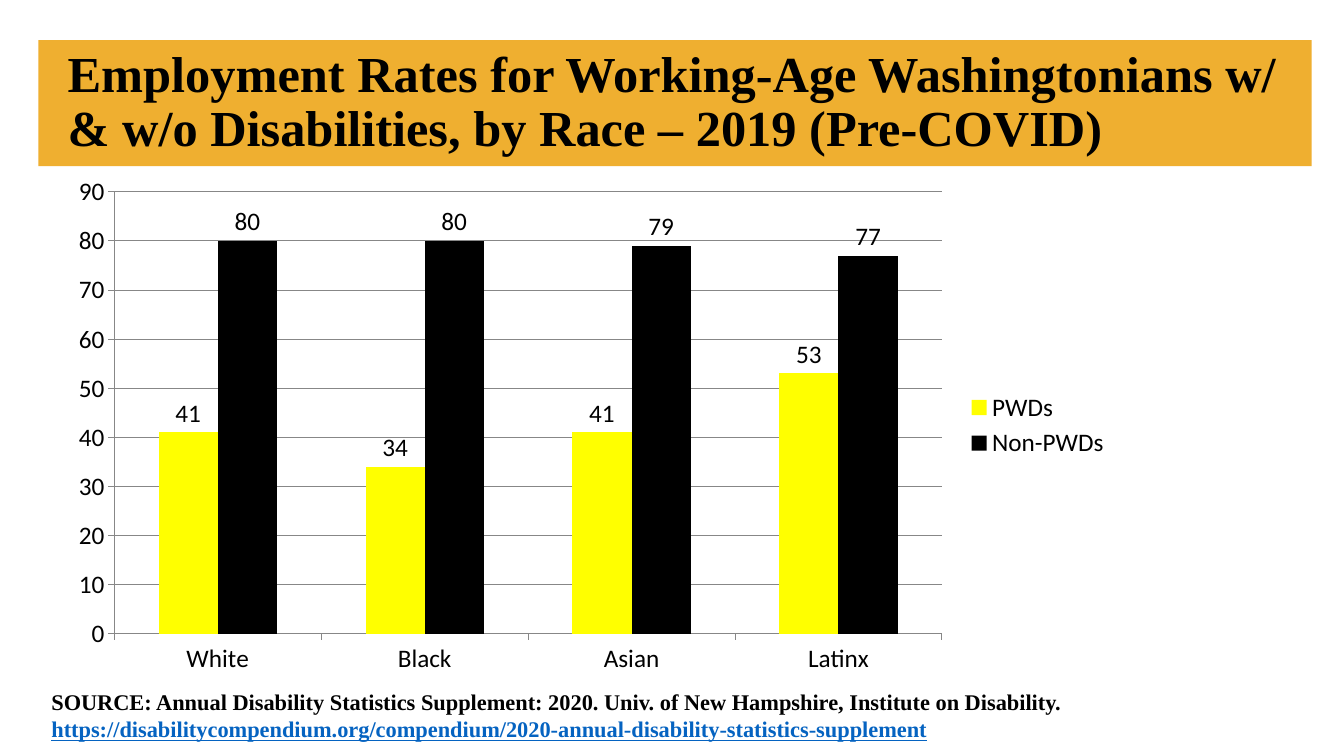
"""Build a slide comparing employment rates by race and disability."""
from dataclasses import dataclass

from pptx import Presentation
from pptx.chart.chart import Chart
from pptx.chart.data import CategoryChartData
from pptx.dml.color import RGBColor
from pptx.enum.chart import XL_CHART_TYPE as ChartType
from pptx.enum.chart import XL_LABEL_POSITION as LabelPosition
from pptx.enum.chart import XL_LEGEND_POSITION as LegendPosition
from pptx.enum.chart import XL_TICK_MARK as TickMark
from pptx.enum.shapes import MSO_SHAPE as ShapeKind
from pptx.enum.text import MSO_ANCHOR as Anchor
from pptx.enum.text import MSO_AUTO_SIZE as AutoSize
from pptx.enum.text import PP_ALIGN as Align
from pptx.slide import Slide
from pptx.text.text import Font, TextFrame
from pptx.util import Inches, Pt

WIDTH, HEIGHT = Inches(13.33), Inches(7.5)
BLACK, GOLD, YELLOW, LINK, GREY = "000000", "EFAF30", "FFFF00", "0563C1", "878787"
SERIF, SANS = "Times New Roman", "Calibri"


@dataclass(frozen=True)
class Frame:
    """A rectangle in percent of the slide's width and height."""
    left: float
    top: float
    width: float
    height: float

    def lengths(self) -> tuple[int, int, int, int]:
        """Return left, top, width and height as slide lengths."""
        return (int(WIDTH * self.left / 100), int(HEIGHT * self.top / 100),
                int(WIDTH * self.width / 100), int(HEIGHT * self.height / 100))


@dataclass(frozen=True)
class Span:
    """One run of bold serif text."""
    text: str
    size: int
    color: str = BLACK
    underline: bool = False


@dataclass(frozen=True)
class Rates:
    """One series of employment rates."""
    name: str
    values: tuple[int, ...]
    color: str


BAND = Frame(2.85, 5.33, 94.75, 16.67)
TITLE = Frame(4.28, 5.33, 91.45, 16.67)
CHART = Frame(4.28, 22, 79.07, 68.53)
SOURCE = Frame(3.08, 90.4, 96.92, 9.6)

HEADING = Span("Employment Rates for Working-Age Washingtonians w/ & w/o "
               "Disabilities, by Race – 2019 (Pre-COVID)", 36)
CITATION = (
    Span("SOURCE: Annual Disability Statistics Supplement: 2020. "
         "Univ. of New Hampshire, Institute on Disability.", 16),
    Span("https://disabilitycompendium.org/compendium/"
         "2020-annual-disability-statistics-supplement", 16, LINK, True),
)
RACES = ("White", "Black", "Asian", "Latinx")
SERIES = (
    Rates("PWDs", (41, 34, 41, 53), YELLOW),
    Rates("Non-PWDs", (80, 80, 79, 77), BLACK),
)


def rgb(color: str) -> RGBColor:
    """Turn a hex string into a colour."""
    return RGBColor.from_string(color)


def style(font: Font, name: str, size: int, color: str) -> None:
    """Set the typeface, size and colour of a font."""
    font.name, font.size = name, Pt(size)
    font.color.rgb = rgb(color)


def write(text: TextFrame, spans: tuple[Span, ...]) -> None:
    """Write each span as a paragraph of its own."""
    text.word_wrap = True
    for index, span in enumerate(spans):
        para = text.add_paragraph() if index else text.paragraphs[0]
        para.alignment = Align.LEFT
        run = para.add_run()
        run.text = span.text
        style(run.font, SERIF, span.size, span.color)
        run.font.bold = True
        if span.underline:
            run.font.underline = True


def draw_title(page: Slide) -> None:
    """Place the title over its gold band."""
    title = page.shapes.title
    title.left, title.top, title.width, title.height = TITLE.lengths()
    text = title.text_frame
    write(text, (HEADING,))
    text.auto_size = AutoSize.NONE
    text.vertical_anchor = Anchor.MIDDLE
    text.paragraphs[0].line_spacing = 0.9
    band = page.shapes.add_shape(ShapeKind.RECTANGLE, *BAND.lengths())
    band.shadow.inherit = False
    band.fill.solid()
    band.fill.fore_color.rgb = rgb(GOLD)
    band.line.fill.background()
    title.element.addprevious(band.element)


def style_axes(chart: Chart) -> None:
    """Format both axes and the gridlines."""
    values = chart.value_axis
    values.minimum_scale, values.maximum_scale, values.major_unit = 0, 90, 10
    values.has_major_gridlines = True
    values.tick_labels.number_format = "#,##0"
    values.tick_labels.number_format_is_linked = False
    for axis in (values, chart.category_axis):
        axis.major_tick_mark = TickMark.OUTSIDE
        axis.minor_tick_mark = TickMark.NONE
    for line in (values.format.line, values.major_gridlines.format.line,
                 chart.category_axis.format.line):
        line.color.rgb = rgb(GREY)
        line.width = Pt(0.75)


def draw_chart(page: Slide) -> None:
    """Draw the clustered columns with their labels and legend."""
    data = CategoryChartData(number_format="#,##0")
    data.categories = RACES
    for rates in SERIES:
        data.add_series(rates.name, rates.values)
    chart = page.shapes.add_chart(
        ChartType.COLUMN_CLUSTERED, *CHART.lengths(), data).chart
    style(chart.font, SANS, 18, BLACK)
    chart.has_title = False
    chart.has_legend = True
    chart.legend.position = LegendPosition.RIGHT
    chart.legend.include_in_layout = False
    style_axes(chart)
    plot = chart.plots[0]
    plot.gap_width, plot.overlap, plot.vary_by_categories = 150, 0, False
    for series, rates in zip(plot.series, SERIES):
        series.invert_if_negative = False
        series.format.fill.solid()
        series.format.fill.fore_color.rgb = rgb(rates.color)
        labels = series.data_labels
        labels.show_value = True
        labels.number_format = "#,##0"
        labels.number_format_is_linked = False
        labels.position = LabelPosition.OUTSIDE_END
        style(labels.font, SANS, 18, BLACK)


def main() -> None:
    """Build and save the deck."""
    deck = Presentation()
    deck.slide_width, deck.slide_height = WIDTH, HEIGHT
    page = deck.slides.add_slide(deck.slide_layouts.get_by_name("Title Only"))
    draw_title(page)
    draw_chart(page)
    box = page.shapes.add_textbox(*SOURCE.lengths())
    write(box.text_frame, CITATION)
    deck.save("out.pptx")


if __name__ == "__main__":
    main()
